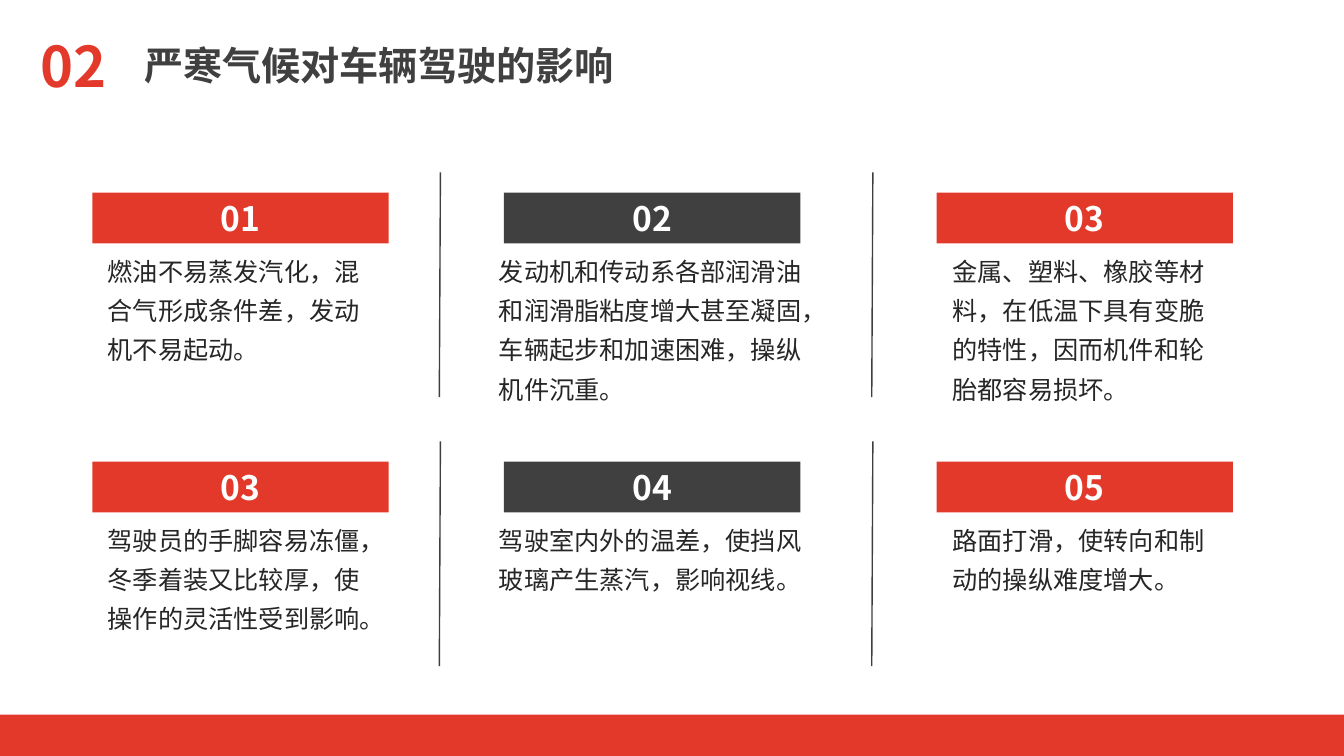
from lxml import etree
from pptx import Presentation
from pptx import util as u
from pptx.dml import color
from pptx.enum import shapes, text
from pptx.oxml import ns

RED, GREY, INK, RULE, WHITE = "E2392B", "404040", "262626", "403D3C", "FFFFFF"
BODY_FONT, TITLE_FONT = "Noto Sans CJK JP", "Noto Sans CJK SC"
ROW_TOP, ROW_STEP = 137.5, 192.2
BAR_WIDTH, BAR_HEIGHT = 211.7, 36.3

# Columns: bar left, bar colour, text left, text width
COLUMNS = [
    (66, RED, 72, 199.4),
    (360, GREY, 351.4, 228.2),
    (669, RED, 675.4, 199.4),
]
DIVIDERS = [314.6, 623.5]

EFFECTS = [
    [
        ("01", "燃油不易蒸发汽化，混合气形成条件差，发动机不易起动。"),
        ("02", "发动机和传动系各部润滑油和润滑脂粘度增大甚至凝固，车辆起步和加速困难，操纵机件沉重。"),
        ("03", "金属、塑料、橡胶等材料，在低温下具有变脆的特性，因而机件和轮胎都容易损坏。"),
    ],
    [
        ("03", "驾驶员的手脚容易冻僵，冬季着装又比较厚，使操作的灵活性受到影响。"),
        ("04", "驾驶室内外的温差，使挡风玻璃产生蒸汽，影响视线。"),
        ("05", "路面打滑，使转向和制动的操纵难度增大。"),
    ],
]


def rgb(value):
    return color.RGBColor.from_string(value)


def write(box, words, size, ink, font=BODY_FONT, bold=False, centred=False, spacing=None):
    para = box.text_frame.paragraphs[0]
    para.alignment = text.PP_ALIGN.CENTER if centred else text.PP_ALIGN.LEFT
    if spacing:
        para.line_spacing = spacing
    span = para.add_run()
    span.text = words
    span.font.size = u.Pt(size)
    span.font.bold = bold
    span.font.color.rgb = rgb(ink)
    span.font.name = font
    # East Asian typeface
    etree.SubElement(span.font._element, ns.qn("a:ea"), typeface=font)


def add_bar(page, left, top, width, height, fill):
    bar = page.shapes.add_shape(
        shapes.MSO_SHAPE.RECTANGLE, u.Pt(left), u.Pt(top), u.Pt(width), u.Pt(height))
    bar.shadow.inherit = False
    bar.fill.solid()
    bar.fill.fore_color.rgb = rgb(fill)
    bar.line.fill.background()
    bar.text_frame.vertical_anchor = text.MSO_ANCHOR.MIDDLE
    return bar


def add_text(page, left, top, width, height, inset=(7.2, 3.6), anchor=text.MSO_ANCHOR.TOP):
    box = page.shapes.add_textbox(u.Pt(left), u.Pt(top), u.Pt(width), u.Pt(height))
    frame = box.text_frame
    frame.word_wrap = True
    frame.vertical_anchor = anchor
    frame.margin_left = frame.margin_right = u.Pt(inset[0])
    frame.margin_top = frame.margin_bottom = u.Pt(inset[1])
    return box


def add_divider(page, left, top):
    line = page.shapes.add_connector(
        shapes.MSO_CONNECTOR.STRAIGHT,
        u.Pt(left), u.Pt(top), u.Pt(left - 0.8), u.Pt(top + 160.6))
    line.line.color.rgb = rgb(RULE)
    line.line.width = u.Pt(1)
    etree.SubElement(line._element.spPr, ns.qn("a:effectLst"))


def add_effect(page, column, top, number, words):
    bar_left, fill, text_left, text_width = column
    bar = add_bar(page, bar_left, top, BAR_WIDTH, BAR_HEIGHT, fill)
    write(bar, number, 24, WHITE, bold=True, centred=True)
    box = add_text(page, text_left, top + BAR_HEIGHT, text_width, 118.8, inset=(5, 2.6))
    write(box, words, 18, INK, spacing=1.3)


def main():
    deck = Presentation()
    deck.slide_width, deck.slide_height = u.Pt(960), u.Pt(540)
    page = deck.slides.add_slide(deck.slide_layouts[6])

    # Footer band
    add_bar(page, 0, 510.4, 960, 29.6, RED)

    # Section number and title
    section = add_text(page, 20.9, 18, 63.4, 57.6, anchor=text.MSO_ANCHOR.MIDDLE)
    write(section, "02", 40, RED, TITLE_FONT, bold=True, centred=True)
    title = add_text(page, 95.8, 25.9, 364.3, 41)
    write(title, "严寒气候对车辆驾驶的影响", 28, GREY, TITLE_FONT, bold=True)

    # Grid of effects with dividers between the columns
    for row, effects in enumerate(EFFECTS):
        top = ROW_TOP + row * ROW_STEP
        for column, (number, words) in zip(COLUMNS, effects):
            add_effect(page, column, top, number, words)
        for left in DIVIDERS:
            add_divider(page, left, top - 14.4)

    deck.save("out.pptx")


if __name__ == "__main__":
    main()
